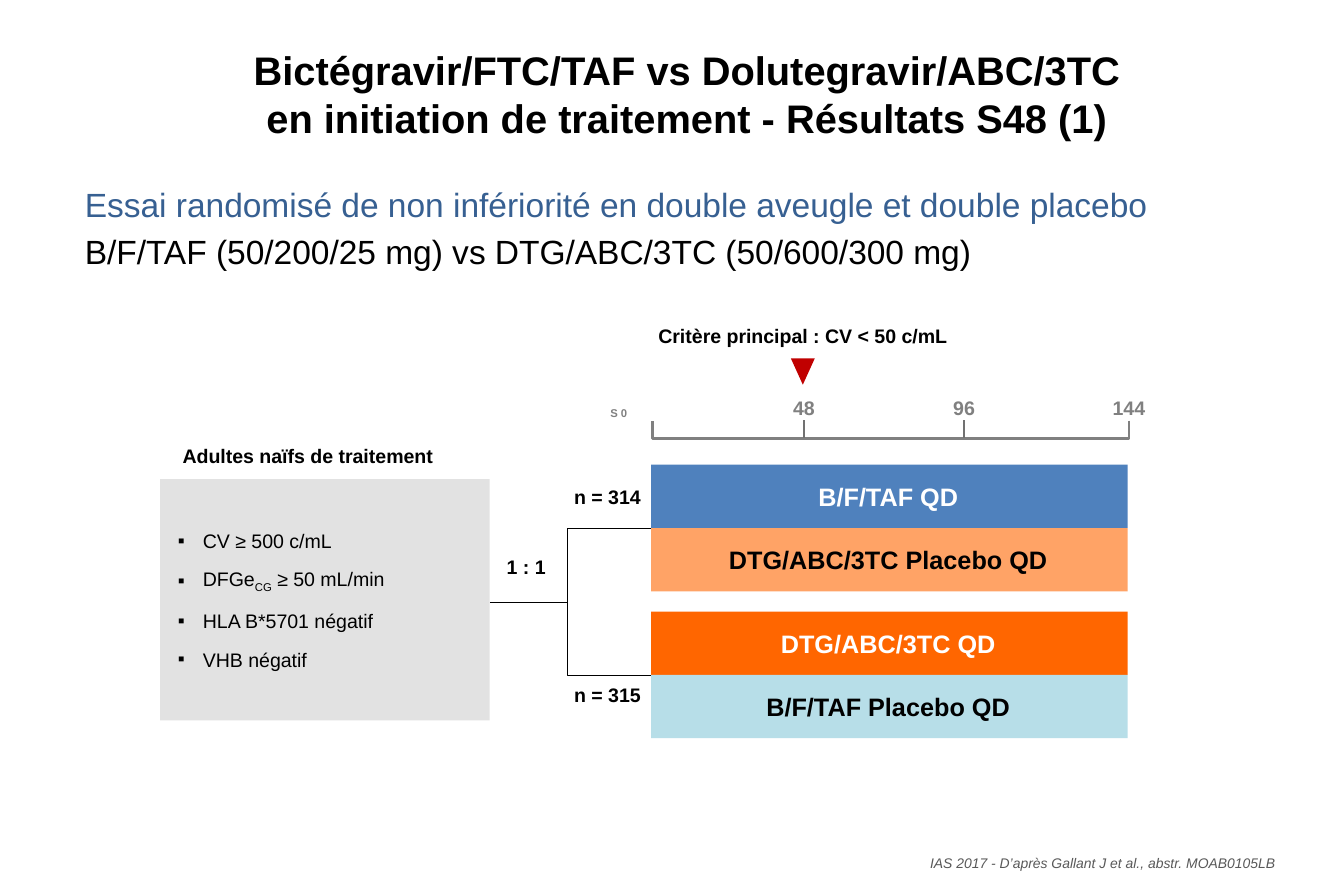
from pptx import Presentation
from pptx.dml.color import RGBColor
from pptx.enum.shapes import MSO_CONNECTOR, MSO_SHAPE
from pptx.enum.text import MSO_ANCHOR, PP_ALIGN
from pptx.oxml.ns import qn
from pptx.util import Inches, Pt
from lxml import etree

FONT = "Arial"
BLACK, WHITE, GREY, TICK_GREY = "000000", "FFFFFF", "808080", "717171"
LABEL_SIZE = 11.8

TITLE = ["Bictégravir/FTC/TAF vs Dolutegravir/ABC/3TC",
         "en initiation de traitement - Résultats S48 (1)"]
INTRO = [
    ("Essai randomisé de non infériorité en double aveugle et double placebo", "376092", 1.54),
    ("B/F/TAF (50/200/25 mg) vs DTG/ABC/3TC (50/600/300 mg)", BLACK, 1.93),
]
CRITERIA_HEADING = "Adultes naïfs de traitement"
# Each criterion is a list of (text, is subscript)
CRITERIA = [
    [("CV ≥ 500 c/mL", False)],
    [("DFGe", False), ("CG", True), (" ≥ 50 mL/min", False)],
    [("HLA B*5701 négatif", False)],
    [("VHB négatif", False)],
]
RATIO = "1 : 1"
ENDPOINT = "Critère principal : CV < 50 c/mL"
START_WEEK = "S 0"
WEEKS = [("48", 6.73), ("96", 8.07), ("144", 9.45)]
# Each arm: size label, its top, then (treatment, fill, text colour)
ARMS = [
    ("n = 314", 4.01, [("B/F/TAF QD", "4F81BD", WHITE),
                       ("DTG/ABC/3TC Placebo QD", "FFA366", BLACK)]),
    ("n = 315", 5.67, [("DTG/ABC/3TC QD", "FF6600", WHITE),
                       ("B/F/TAF Placebo QD", "B7DEE8", BLACK)]),
]
SOURCE = "IAS 2017 - D’après Gallant J et al., abstr. MOAB0105LB"

ARM_LEFT, ARM_TOP, ARM_WIDTH = 5.45, 3.89, 3.99
BAR_HEIGHT, ARM_PITCH = 0.53, 1.23
AXIS_TOP, AXIS_BOTTOM, AXIS_LEFT = 3.52, 3.67, 5.46
FORK_X, FORK_Y, CRITERIA_RIGHT = 4.75, 5.04, 4.1

prs = Presentation()
prs.slide_width, prs.slide_height = Inches(11.25), Inches(7.5)
slide = prs.slides.add_slide(prs.slide_layouts[5])
shapes = slide.shapes


def rgb(value):
    return RGBColor.from_string(value)


def box(left, top, width, height):
    return [Inches(v) for v in (left, top, width, height)]


def add_run(paragraph, text, size, color=BLACK, bold=False, italic=False):
    run = paragraph.add_run()
    run.text = text
    font = run.font
    font.name, font.size, font.bold, font.italic = FONT, Pt(size), bold, italic
    font.color.rgb = rgb(color)
    return run


def add_text(text, place, size=LABEL_SIZE, color=BLACK, bold=True, italic=False,
             align=PP_ALIGN.CENTER, anchor=MSO_ANCHOR.TOP, wrap=False, inset=None):
    frame = shapes.add_textbox(*box(*place)).text_frame
    frame.word_wrap, frame.vertical_anchor = wrap, anchor
    if inset is not None:
        set_insets(frame, inset, inset, inset, inset)
    frame.paragraphs[0].alignment = align
    add_run(frame.paragraphs[0], text, size, color, bold, italic)


def set_insets(frame, left, top, right, bottom):
    frame.margin_left, frame.margin_top = Inches(left), Inches(top)
    frame.margin_right, frame.margin_bottom = Inches(right), Inches(bottom)


def add_filled(preset, place, fill):
    shape = shapes.add_shape(preset, *box(*place))
    shape.shadow.inherit = False
    shape.fill.solid()
    shape.fill.fore_color.rgb = rgb(fill)
    shape.line.fill.background()
    return shape


def style_line(line, color, width):
    line.color.rgb = rgb(color)
    line.width = Pt(width)


def add_line(x1, y1, x2, y2, color, width):
    line = shapes.add_connector(MSO_CONNECTOR.STRAIGHT, *box(x1, y1, x2, y2))
    style_line(line.line, color, width)
    etree.SubElement(line._element.spPr, qn("a:effectLst"))


def add_open_path(points, color, width):
    corners = [(Inches(x), Inches(y)) for x, y in points]
    builder = shapes.build_freeform(*corners[0])
    builder.add_line_segments(corners[1:], close=False)
    path = builder.convert_to_shape()
    path.shadow.inherit = False
    path.fill.background()
    style_line(path.line, color, width)


def add_bullet(paragraph):
    props = paragraph._p.get_or_add_pPr()
    props.set("marL", str(Inches(0.26)))
    props.set("indent", str(Inches(-0.21)))
    etree.SubElement(props, qn("a:buFont"), typeface=FONT)
    etree.SubElement(props, qn("a:buChar"), char="▪")


# Title and introduction
title = shapes.title
title.left, title.top, title.width, title.height = box(0.16, 0.21, 11.18, 1.14)
title.text_frame.vertical_anchor = MSO_ANCHOR.MIDDLE
heading = title.text_frame.paragraphs[0]
heading.alignment = PP_ALIGN.CENTER
for number, title_line in enumerate(TITLE):
    if number:
        heading.add_line_break()
    add_run(heading, title_line, 24, bold=True)
for sentence, color, top in INTRO:
    add_text(sentence, (0.71, top, 10.4, 0.36), 20.2, color, bold=False,
             align=PP_ALIGN.LEFT, wrap=True, inset=0)

# Inclusion criteria
add_text(CRITERIA_HEADING, (1.43, 3.67, 2.68, 0.3), align=PP_ALIGN.LEFT, wrap=True)
criteria = add_filled(MSO_SHAPE.RECTANGLE, (1.34, 4.01, 2.76, 2.02), "E2E2E2").text_frame
criteria.vertical_anchor = MSO_ANCHOR.MIDDLE
for number, parts in enumerate(CRITERIA):
    criterion = criteria.add_paragraph() if number else criteria.paragraphs[0]
    criterion.alignment = PP_ALIGN.LEFT
    criterion.space_after = Pt(9.1)
    add_bullet(criterion)
    for text, subscript in parts:
        run = add_run(criterion, text, LABEL_SIZE)
        if subscript:
            run.font._element.set("baseline", "-25000")

# Randomisation fork
fork_ends = [ARM_TOP + BAR_HEIGHT + i * ARM_PITCH for i in range(len(ARMS))]
add_open_path([(ARM_LEFT, fork_ends[0]), (FORK_X, fork_ends[0]),
               (FORK_X, fork_ends[1]), (ARM_LEFT, fork_ends[1])], BLACK, 0.5)
add_line(CRITERIA_RIGHT, FORK_Y, FORK_X, FORK_Y, BLACK, 0.5)
add_text(RATIO, (4.14, 4.6, 0.53, 0.3))

# Treatment arms
for arm, (size_label, label_top, treatments) in enumerate(ARMS):
    add_text(size_label, (4.7, label_top, 0.77, 0.3))
    for row, (treatment, fill, color) in enumerate(treatments):
        top = ARM_TOP + arm * ARM_PITCH + row * BAR_HEIGHT
        bar = add_filled(MSO_SHAPE.RECTANGLE, (ARM_LEFT, top, ARM_WIDTH, BAR_HEIGHT), fill)
        frame = bar.text_frame
        frame.vertical_anchor = MSO_ANCHOR.MIDDLE
        set_insets(frame, 0.08, 0.05, 0.1, 0.05)
        frame.paragraphs[0].alignment = PP_ALIGN.CENTER
        add_run(frame.paragraphs[0], treatment, 15.2, color, bold=True)

# Timeline in weeks
axis_right = WEEKS[-1][1]
add_open_path([(axis_right, AXIS_TOP), (axis_right, AXIS_BOTTOM),
               (AXIS_LEFT, AXIS_BOTTOM), (AXIS_LEFT, AXIS_TOP)], GREY, 1.5)
for _, x in WEEKS[:-1]:
    add_line(x, AXIS_TOP, x, AXIS_BOTTOM, TICK_GREY, 1.5)
for week, x in WEEKS:
    add_text(week, (x - 0.25, 3.26, 0.5, 0.3), color=GREY, anchor=MSO_ANCHOR.BOTTOM)
add_text(START_WEEK, (4.61, 3.26, 1.14, 0.3), 6.8, GREY,
         anchor=MSO_ANCHOR.BOTTOM, wrap=True)
add_text(ENDPOINT, (5.41, 2.67, 2.62, 0.26), inset=0.04)
marker = add_filled(MSO_SHAPE.ISOSCELES_TRIANGLE, (6.62, 3, 0.2, 0.22), "C00000")
marker.rotation = 180

add_text(SOURCE, (2.71, 6.93, 7.97, 0.58), 8.4, "595959", bold=False, italic=True,
         align=PP_ALIGN.RIGHT, anchor=MSO_ANCHOR.MIDDLE, wrap=True, inset=0)

prs.save("out.pptx")
